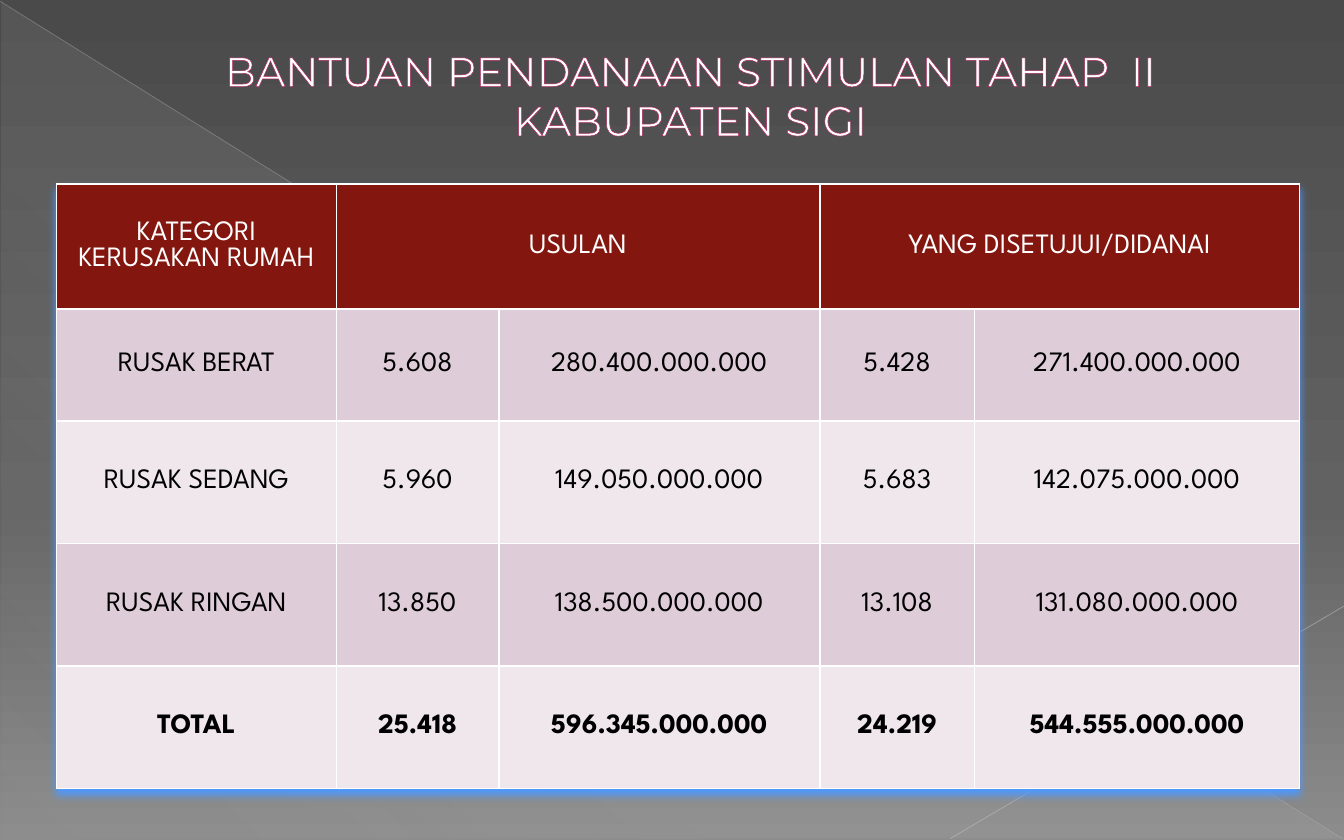
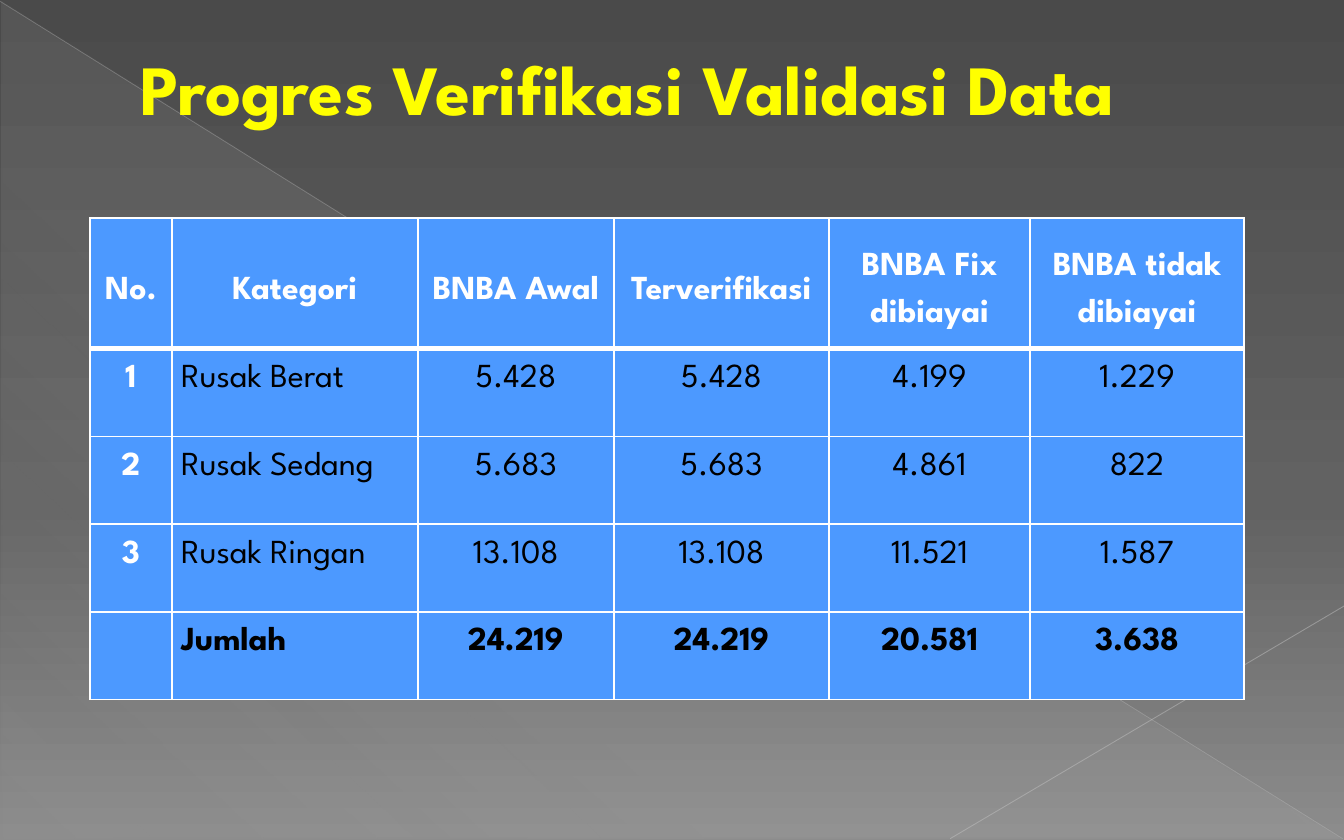
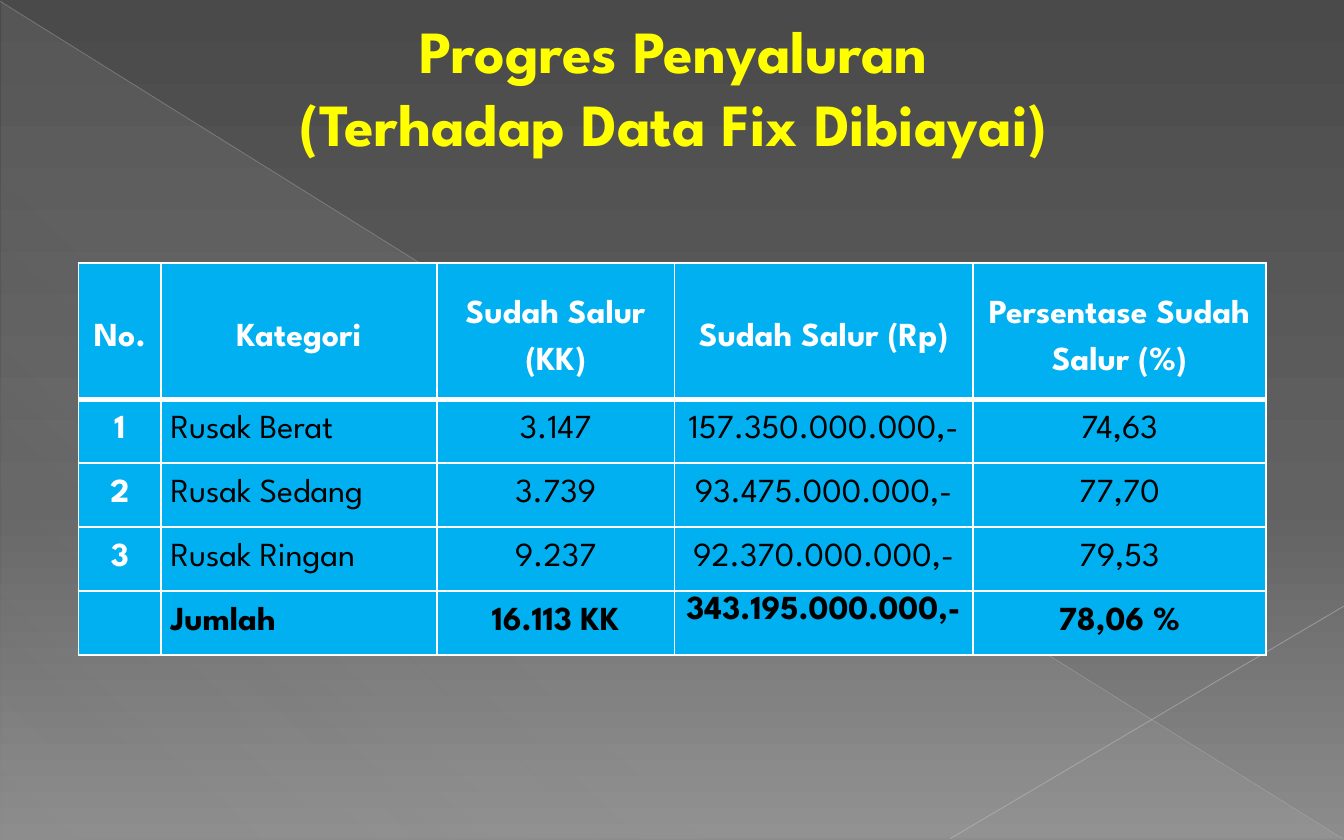
from dataclasses import dataclass, field
from typing import Any

from lxml.etree import SubElement
from pptx import Presentation
from pptx.dml.color import RGBColor
from pptx.enum.shapes import MSO_CONNECTOR as Connector, MSO_SHAPE as ShapeKind
from pptx.enum.text import MSO_ANCHOR as Anchor, MSO_AUTO_SIZE as AutoSize, PP_ALIGN as Align
from pptx.oxml.ns import qn
from pptx.util import Pt

WIDTH, HEIGHT = 720, 450
WHITE, BLACK, YELLOW, BLUE = "FFFFFF", "000000", "FFFF00", "4C99FF"
CYAN, MAROON, OUTLINE = "00B0F0", "83170F", "B12761"
BODY_FONT, TITLE_FONT = "League Spartan", "Montserrat"


@dataclass(frozen=True)
class Stop:
    position: int
    color: str
    opacity: int = 100


@dataclass(frozen=True)
class Ray:
    start: tuple[float, float]
    end: tuple[float, float]
    color: str
    width: float
    opacity: int


@dataclass(frozen=True)
class Title:
    text: str
    box: tuple[float, float, float, float]
    size: float
    font: str = BODY_FONT
    color: str = YELLOW
    bold: bool = True
    align: Align = Align.CENTER
    side_inset: float = 7.2
    bottom_inset: float = 3.6
    line_spacing: Any = None


@dataclass(frozen=True)
class DataTable:
    origin: tuple[float, float]
    columns: list[float]
    heights: list[float]
    rows: list[list[str]]
    header_fill: str
    body_fills: list[str]
    size: float = 18
    insets: tuple[float, float] = (5, 0)
    line_spacing: float = 1.5
    tight_cells: dict[tuple[int, int], float] = field(default_factory=dict)
    numbered: bool = True
    header_spans: tuple[tuple[int, int], ...] = ()
    header_rule: float = 3
    shadow: bool = False


BACKDROP = [Stop(0, "4A4A4A"), Stop(60, "626262"), Stop(100, "8C8C8C")]
SHEEN = [Stop(0, "D2D2D2", 10), Stop(70, "D2D2D2", 8), Stop(100, "D2D2D2", 1)]
RAYS = [
    Ray((0, 0.7), (719.3, 449.3), "BFBFBF", 0.39, 35),
    Ray((720, 324.7), (509, 449.3), "C6C6C6", 0.47, 45),
]

PAGES = [
    (
        Title("BANTUAN PENDANAAN STIMULAN TAHAP  II\vKABUPATEN SIGI",
              (41.8, 20.9, 617.8, 59.8), 22, TITLE_FONT, WHITE, False, side_inset=5.8),
        DataTable(
            (30.2, 98.6), [150, 87, 172, 83, 174], [67, 60] + [65.6] * 3,
            [
                ["KATEGORI KERUSAKAN RUMAH", "USULAN", "", "YANG DISETUJUI/DIDANAI", ""],
                ["RUSAK BERAT", "5.608", "280.400.000.000", "5.428", "271.400.000.000"],
                ["RUSAK SEDANG", "5.960", "149.050.000.000", "5.683", "142.075.000.000"],
                ["RUSAK RINGAN", "13.850", "138.500.000.000", "13.108", "131.080.000.000"],
                ["TOTAL", "25.418", "596.345.000.000", "24.219", "544.555.000.000"],
            ],
            MAROON, ["DECCD8", "EFE7EC"], size=15, insets=(5.8, 2.9), line_spacing=1,
            numbered=False, header_spans=((1, 2), (3, 4)), header_rule=1, shadow=True,
        ),
    ),
    (
        Title("Progres Verifikasi Validasi Data", (30.2, 35.3, 648, 57.6), 37.8,
              align=Align.LEFT, bottom_inset=38),
        DataTable(
            (48.2, 116.8), [43.9, 131.8, 105.1, 115.2, 107.8, 114.5], [70] + [47] * 4,
            [
                ["No.", "Kategori", "BNBA Awal", "Terverifikasi", "BNBA Fix dibiayai",
                 "BNBA tidak dibiayai"],
                ["1", "Rusak Berat", "5.428", "5.428", "4.199", "1.229"],
                ["2", "Rusak Sedang", "5.683", "5.683", "4.861", "822"],
                ["3", "Rusak Ringan", "13.108", "13.108", "11.521", "1.587"],
                ["", "Jumlah", "24.219", "24.219", "20.581", "3.638"],
            ],
            BLUE, [BLUE],
        ),
    ),
    (
        Title("Progres Penyaluran\v(Terhadap Data Fix Dibiayai)", (18, 19.4, 648, 91.4), 32,
              bottom_inset=42, line_spacing=Pt(39)),
        DataTable(
            (42, 141), [44.4, 147.6, 127.4, 159.8, 157], [72.8] + [34.3] * 4,
            [
                ["No.", "Kategori", "Sudah Salur (KK)", "Sudah Salur (Rp)",
                 "Persentase Sudah Salur (%)"],
                ["1", "Rusak Berat", "3.147", "157.350.000.000,-", "74,63"],
                ["2", "Rusak Sedang", "3.739", "93.475.000.000,-", "77,70"],
                ["3", "Rusak Ringan", "9.237", "92.370.000.000,-", "79,53"],
                ["", "Jumlah", "16.113 KK", "343.195.000.000,-", "78,06 %"],
            ],
            CYAN, [CYAN], tight_cells={(4, 3): 1.15},
        ),
    ),
]


def rgb(value: str) -> RGBColor:
    return RGBColor.from_string(value)


def apply_format(target: Any, values: dict[str, Any]) -> None:
    for name, value in values.items():
        setattr(target, name, value)


def add_node(parent: Any, tag: str, **attributes: Any) -> Any:
    return SubElement(parent, qn(tag), {name: str(value) for name, value in attributes.items()})


def add_color(parent: Any, color: str, opacity: int = 100) -> None:
    node = add_node(parent, "a:srgbClr", val=color)
    if opacity < 100:
        add_node(node, "a:alpha", val=opacity * 1000)


def add_stroke(parent: Any, tag: str, color: str, width: float) -> Any:
    stroke = add_node(parent, tag, w=Pt(width))
    add_color(add_node(stroke, "a:solidFill"), color)
    return stroke


def set_gradient(fill: Any, element: Any, stops: list[Stop], angle: int) -> None:
    fill.gradient()
    gradient = next(element.iter(qn("a:gradFill")))
    for child in list(gradient):
        gradient.remove(child)
    stop_list = add_node(gradient, "a:gsLst")
    for stop in stops:
        add_color(add_node(stop_list, "a:gs", pos=stop.position * 1000), stop.color, stop.opacity)
    add_node(gradient, "a:lin", ang=angle * 60000, scaled=0)


def add_backdrop(slide: Any) -> None:
    set_gradient(slide.background.fill, slide.element, BACKDROP, 90)
    triangle = slide.shapes.add_shape(
        ShapeKind.RIGHT_TRIANGLE, Pt(0.7), Pt(0.7), Pt(WIDTH - 1.4), Pt(HEIGHT - 1.4))
    triangle.shadow.inherit = False
    triangle.line.fill.background()
    set_gradient(triangle.fill, triangle.element, SHEEN, 133)
    for ray in RAYS:
        line = slide.shapes.add_connector(
            Connector.STRAIGHT, *(Pt(value) for value in ray.start + ray.end))
        line.line.width = Pt(ray.width)
        line.line.color.rgb = rgb(ray.color)
        color = next(line.element.spPr.iter(qn("a:srgbClr")))
        add_node(color, "a:alpha", val=ray.opacity * 1000)
        add_node(line.element.spPr, "a:effectLst")


def add_title(slide: Any, title: Title) -> None:
    frame = slide.shapes.add_textbox(*(Pt(value) for value in title.box)).text_frame
    apply_format(frame, {
        "word_wrap": True, "auto_size": AutoSize.NONE, "vertical_anchor": Anchor.MIDDLE,
        "margin_left": Pt(title.side_inset), "margin_right": Pt(title.side_inset),
        "margin_top": Pt(3.6), "margin_bottom": Pt(title.bottom_inset),
    })
    frame.text = title.text
    paragraph = frame.paragraphs[0]
    apply_format(paragraph, {"alignment": title.align, "line_spacing": title.line_spacing})
    apply_format(paragraph._p.get_or_add_pPr().attrib, {})
    paragraph._p.get_or_add_pPr().set("marL", str(Pt(38.2)))
    for run in paragraph.runs:
        apply_format(run.font, {"name": title.font, "size": Pt(title.size), "bold": title.bold})
        run.font.color.rgb = rgb(title.color)
        properties = run.font._element
        properties.insert(0, add_stroke(properties, "a:ln", OUTLINE, 0.5))


def format_cell(cell: Any, data: DataTable, row: int, column: int) -> None:
    header, total = row == 0, row == len(data.rows) - 1
    number = data.numbered and column == 0
    label = data.numbered and column == 1 and not header
    centered = header or not data.numbered
    side, edge = (Pt(value) for value in data.insets)
    cell.text = data.rows[row][column]
    apply_format(cell, {
        "margin_left": side, "margin_right": side, "margin_top": edge, "margin_bottom": edge,
        "vertical_anchor": Anchor.MIDDLE if centered else Anchor.TOP,
    })
    paragraph = cell.text_frame.paragraphs[0]
    apply_format(paragraph, {
        "alignment": Align.LEFT if label else Align.CENTER,
        "line_spacing": data.tight_cells.get((row, column), data.line_spacing),
    })
    apply_format(paragraph.font, {
        "name": BODY_FONT, "size": Pt(data.size),
    })
    for run in paragraph.runs:
        apply_format(run.font, {
            "name": BODY_FONT, "size": Pt(data.size),
            "bold": total or data.numbered and (header or number),
        })
        run.font.color.rgb = rgb(WHITE if header or number else BLACK)
    top = data.header_rule if row == 1 else 1
    bottom = data.header_rule if header else 1
    properties = cell._tc.get_or_add_tcPr()
    for side_name, width in zip("LRTB", (1, 1, top, bottom)):
        add_stroke(properties, f"a:ln{side_name}", WHITE, width)
    cell.fill.solid()
    fills = data.body_fills
    cell.fill.fore_color.rgb = rgb(data.header_fill if header else fills[(row - 1) % len(fills)])


def add_data_table(slide: Any, data: DataTable) -> None:
    bounds = (*data.origin, sum(data.columns), sum(data.heights))
    table = slide.shapes.add_table(
        len(data.rows), len(data.columns), *(Pt(value) for value in bounds)).table
    apply_format(table, {"first_row": True, "horz_banding": False})
    for column, width in zip(table.columns, data.columns):
        column.width = Pt(width)
    for row, height in zip(table.rows, data.heights):
        row.height = Pt(height)
    for row, texts in enumerate(data.rows):
        for column in range(len(texts)):
            format_cell(table.cell(row, column), data, row, column)
    for first, last in data.header_spans:
        table.cell(0, first).merge(table.cell(0, last))
    if data.shadow:
        properties = table._tbl.tblPr
        effects = add_node(properties, "a:effectLst")
        properties.insert(0, effects)
        add_color(add_node(effects, "a:outerShdw", blurRad=Pt(4), dist=Pt(3), dir=5400000,
                           algn="t", rotWithShape=0), BLUE)


def main() -> None:
    presentation = Presentation()
    apply_format(presentation, {"slide_width": Pt(WIDTH), "slide_height": Pt(HEIGHT)})
    for title, data in PAGES:
        slide = presentation.slides.add_slide(presentation.slide_layouts[6])
        add_backdrop(slide)
        add_title(slide, title)
        add_data_table(slide, data)
    presentation.save("out.pptx")


if __name__ == "__main__":
    main()
